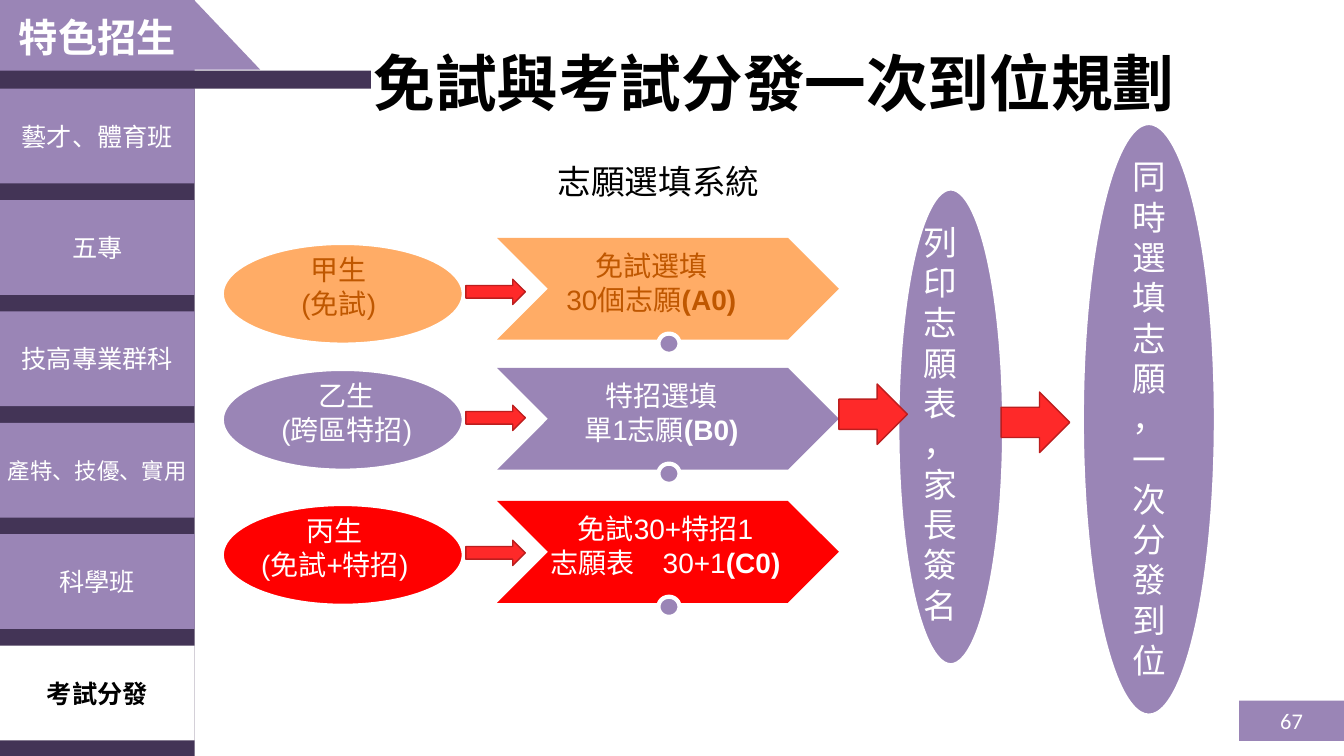
from pptx import Presentation
from pptx.dml.color import RGBColor
from pptx.enum.shapes import MSO_SHAPE as Shape
from pptx.enum.text import MSO_ANCHOR as Anchor, PP_ALIGN as Align
from pptx.util import Inches, Pt

PURPLE, DARK, WHITE, BLACK = "9A85B6", "433456", "FFFFFF", "000000"
ORANGE, BROWN, RED = "FFAC66", "BF5700", "FF0000"
ARROW_FILL, ARROW_LINE = "FE2929", "BC1E1E"


def color(value):
    return RGBColor.from_string(value)


def add_figure(slide, kind, left, top, width, height, fill, line=None, line_width=3):
    figure = slide.shapes.add_shape(
        kind, Inches(left), Inches(top), Inches(width), Inches(height))
    figure.shadow.inherit = False
    figure.fill.solid()
    figure.fill.fore_color.rgb = color(fill)
    if line:
        figure.line.color.rgb = color(line)
        figure.line.width = Pt(line_width)
    else:
        figure.line.fill.background()
    return figure


def write(holder, lines, size, font, text_color, bold=None, align=Align.CENTER,
          anchor=Anchor.TOP, inset=0.1):
    """Each line is a string, or a pair of plain text and bold ending."""
    frame = holder.text_frame
    frame.word_wrap = True
    frame.vertical_anchor = anchor
    frame.margin_left = frame.margin_right = Inches(inset)
    frame.margin_top = frame.margin_bottom = Inches(inset / 2)
    for index, line in enumerate(lines):
        paragraph = frame.paragraphs[0] if index == 0 else frame.add_paragraph()
        paragraph.alignment = align
        paragraph.font.size = Pt(size)
        paragraph.font.name = font
        paragraph.font.bold = bold
        paragraph.font.color.rgb = color(text_color)
        if isinstance(line, str):
            paragraph.add_run().text = line
        else:
            plain, code = line
            paragraph.add_run().text = plain
            code_run = paragraph.add_run()
            code_run.text = code
            code_run.font.bold = True


def add_text(slide, left, top, width, height, lines, size, font, text_color, **options):
    box = slide.shapes.add_textbox(
        Inches(left), Inches(top), Inches(width), Inches(height))
    write(box, lines, size, font, text_color, **options)


def add_arrow(slide, left, top, width, height):
    add_figure(slide, Shape.RIGHT_ARROW, left, top, width, height,
               ARROW_FILL, ARROW_LINE, 1)


def add_sidebar(slide, left, top, width, height):
    # Section heading with its slanted end
    add_figure(slide, Shape.ISOSCELES_TRIANGLE, left + 1.27, top, 1.31, 0.69, PURPLE)
    heading = add_figure(slide, Shape.RECTANGLE, left, top, width, 0.73, PURPLE)
    write(heading, ["特色招生"], 28, "Calibri", WHITE, bold=True, anchor=Anchor.MIDDLE)

    # Dark backing and rule
    add_figure(slide, Shape.RECTANGLE, left, top + 0.86, width, height - 0.86, DARK)
    add_figure(slide, Shape.RECTANGLE, left, top + 0.7, 3.68, 0.18, DARK)

    # Tabs, the last one being current
    tabs = [("藝才、體育班", 18, "Arial"), ("五專", 18, "Calibri"),
            ("技高專業群科", 18, "Calibri"), ("產特、技優、實用", 16, "Calibri"),
            ("科學班", 18, "Calibri"), ("考試分發", 18, "Calibri")]
    for index, (label, size, font) in enumerate(tabs):
        current = index == len(tabs) - 1
        tab = add_figure(slide, Shape.RECTANGLE, left, top + 0.88 + 1.105 * index,
                         width, 0.94, WHITE if current else PURPLE)
        write(tab, [label], size, font, BLACK if current else WHITE,
              bold=current, anchor=Anchor.MIDDLE, inset=0)


def add_student_row(slide, left, top, fill, text_color, student, student_center,
                    choices, choices_center, chevron_top):
    # Student
    add_figure(slide, Shape.OVAL, left, top, 2.4, 1.01, fill, WHITE)
    add_text(slide, left + student_center - 1, top + 0.05, 2, 0.77,
             student, 20, "Arial", text_color)

    # Choices filled in
    add_figure(slide, Shape.CHEVRON, left + 2.73, chevron_top, 3.39, 1.01, fill)
    add_figure(slide, Shape.OVAL, left + 4.33, chevron_top + 0.95, 0.21, 0.2,
               PURPLE, WHITE)
    add_text(slide, left + choices_center - 1.5, chevron_top + 0.06, 3, 0.77,
             choices, 20, "Arial", text_color)
    add_arrow(slide, left + 2.42, top + 0.36, 0.59, 0.25)


def add_step(slide, left, top, width, height, text_left, text_top, text_width, lines):
    add_figure(slide, Shape.OVAL, left, top, width, height, PURPLE, WHITE)
    add_text(slide, left + text_left, top + text_top, text_width,
             height - 2 * text_top, lines, 24, "Arial", WHITE, align=Align.LEFT)


def add_page_number(slide, left, top, width, height):
    badge = add_figure(slide, Shape.RECTANGLE, left, top, width, height, PURPLE)
    write(badge, ["67"], 16, "Calibri", WHITE, anchor=Anchor.MIDDLE)


def main():
    deck = Presentation()
    deck.slide_width, deck.slide_height = Inches(13.33), Inches(7.5)
    slide = deck.slides.add_slide(deck.slide_layouts[6])

    add_sidebar(slide, 0, 0, 1.93, 7.5)

    # Title and system name
    add_text(slide, 2.03, 0.45, 11.3, 0.74, ["免試與考試分發一次到位規劃"],
             44, "Calibri", BLACK, bold=True, inset=0)
    add_text(slide, 5.19, 1.55, 2.68, 0.5, ["志願選填系統"], 24, "Calibri", BLACK)

    # Three kinds of student
    add_student_row(slide, 2.2, 2.41, ORANGE, BROWN, ["甲生", "(免試)"], 1.16,
                    ["免試選填", ("30個志願", "(A0)")], 4.26, 2.36)
    add_student_row(slide, 2.2, 3.66, PURPLE, WHITE, ["乙生", "(跨區特招)"], 1.24,
                    ["特招選填", ("單1志願", "(B0)")], 4.36, 3.65)
    add_student_row(slide, 2.2, 5, RED, WHITE, ["丙生", "(免試+特招)"], 1.12,
                    ["免試30+特招1", ("志願表　30+1", "(C0)")], 4.4, 4.97)

    # Shared closing steps
    add_step(slide, 8.9, 1.87, 1.06, 4.73, 0.16, 0.28, 0.81,
             ["列印志願表", "，家長簽名"])
    add_step(slide, 10.73, 1.22, 1.33, 5.88, 0.4, 0.28, 0.65,
             ["同時選填志願", "，一次分發到位"])
    add_arrow(slide, 8.32, 3.81, 0.68, 0.6)
    add_arrow(slide, 9.93, 3.89, 0.68, 0.6)

    add_page_number(slide, 12.29, 6.95, 1.04, 0.4)
    deck.save("out.pptx")


if __name__ == "__main__":
    main()
